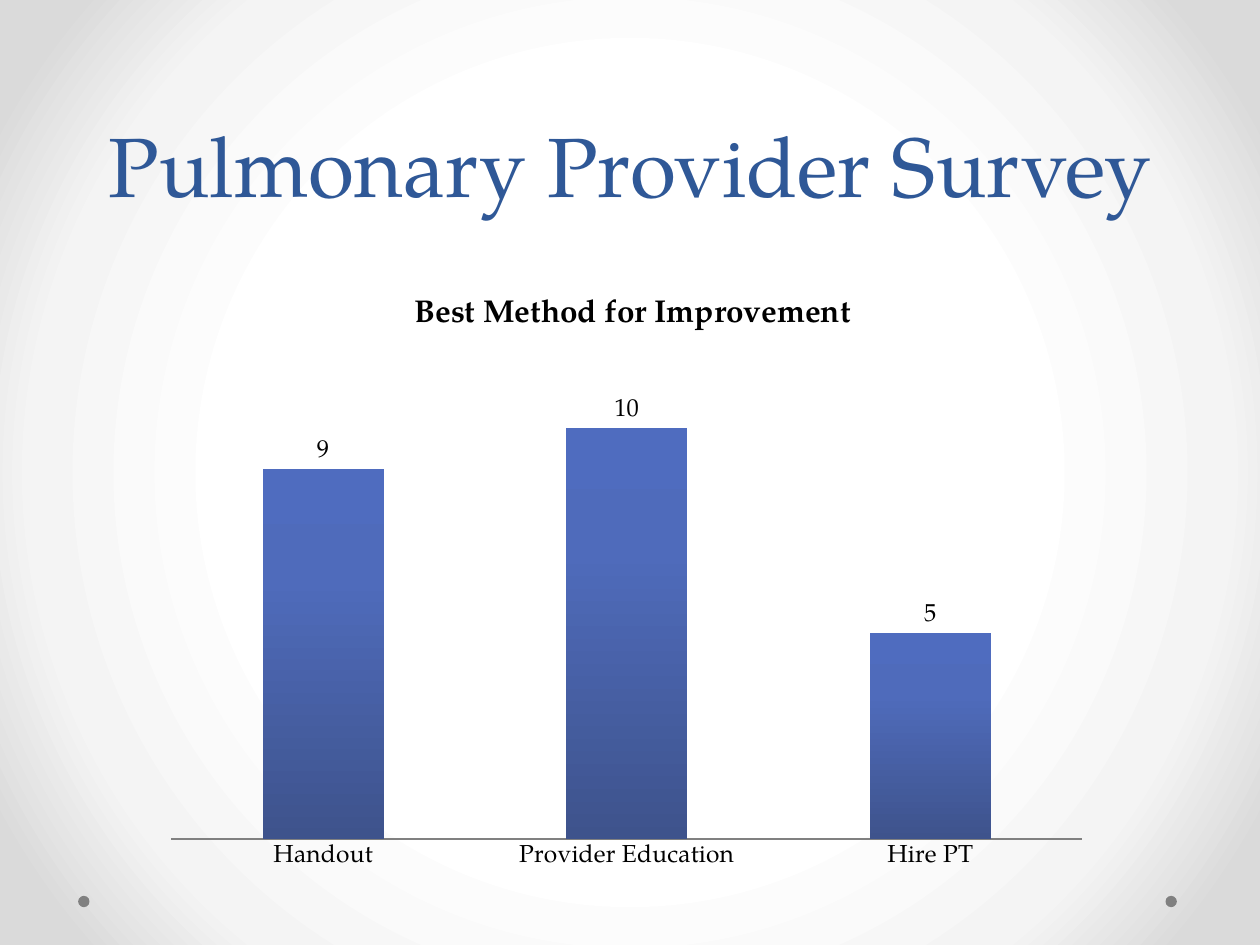
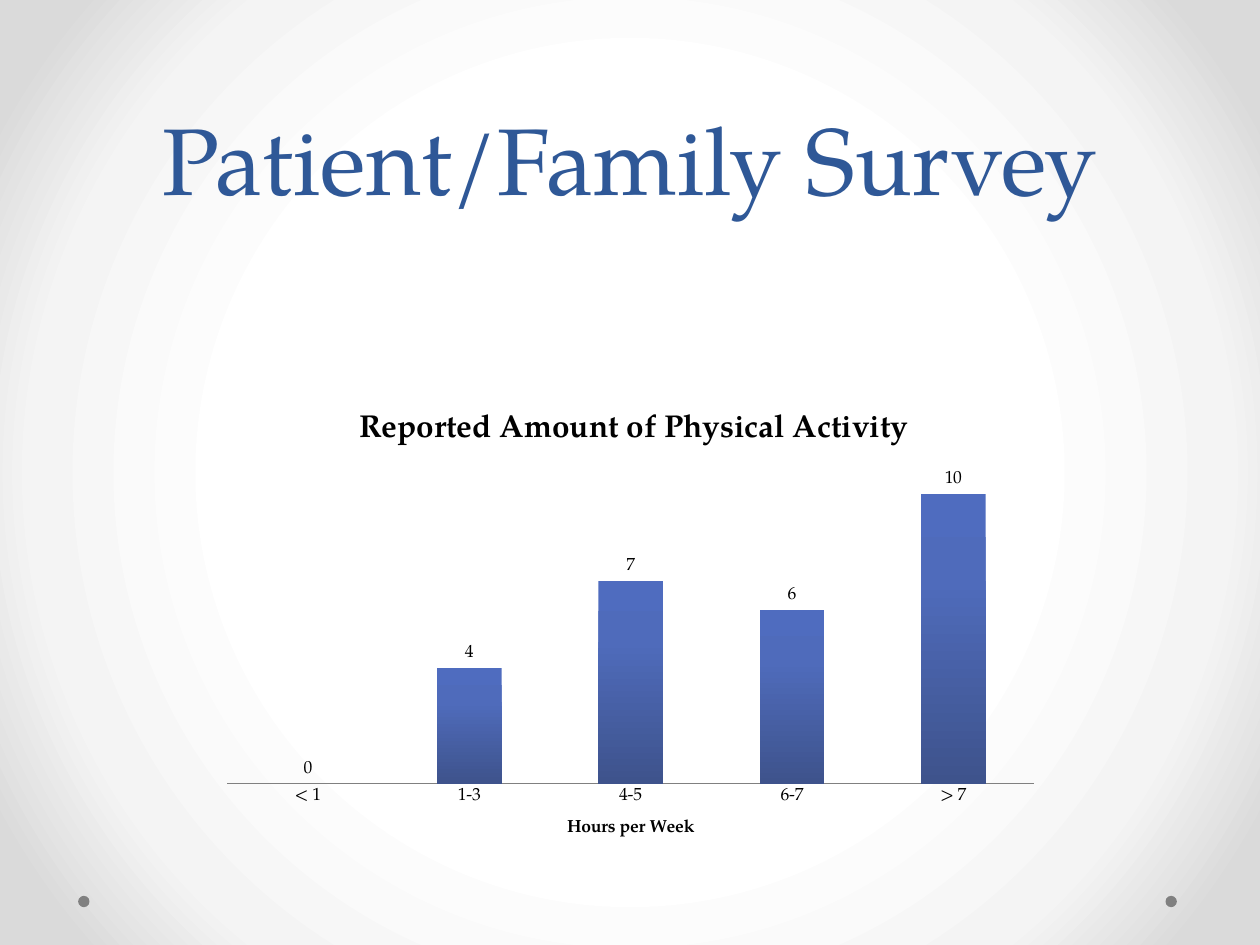
"""Build two survey slides, each with a title and a column chart."""
from dataclasses import dataclass

from pptx import Presentation
from pptx.chart.chart import Chart
from pptx.chart.data import CategoryChartData
from pptx.dml.color import RGBColor
from pptx.enum.chart import XL_CHART_TYPE, XL_LABEL_POSITION, XL_TICK_MARK
from pptx.enum.shapes import MSO_SHAPE
from pptx.enum.text import MSO_ANCHOR, PP_ALIGN
from pptx.oxml import parse_xml
from pptx.oxml.ns import nsdecls, qn
from pptx.slide import Slide
from pptx.util import Inches, Pt


@dataclass(frozen=True)
class Theme:
    """Colours, gradients and type sizes for the deck."""
    font: str = "TeX Gyre Pagella"
    title: str = "2F5897"
    text: str = "000000"
    dot: str = "808080"
    axis: str = "808080"
    back: tuple = ((50, "FFFFFF"), (76, "F4F4F4"), (92, "DADADA"))
    bar: tuple = ((0, "4F6CBF"), (30, "4F6BBB"), (100, "3E538C"))
    lead: int = 58
    head: int = 18
    small: int = 10


@dataclass(frozen=True)
class Survey:
    """One survey slide; frames are left, top, width, height."""
    title: str
    size: int
    head: str
    cats: tuple
    vals: tuple
    frame: tuple
    plot: tuple
    spot: tuple
    labels: int
    line: float
    axis: str = ""


THEME = Theme()
DOTS = (9.25, 0.62)
CIRCLE = '<a:path path="circle"><a:fillToRect l="50000" t="50000" r="50000" b="50000"/></a:path>'
DOWN = '<a:lin ang="5400000" scaled="0"/>'
SURVEYS = (
    Survey("Pulmonary Provider Survey", 48, "Best Method for Improvement",
           ("Handout", "Provider Education", "Hire PT"), (9, 10, 5),
           (1.21, 2.16, 7.53, 4.84), (0.02, 0.12, 0.96, 0.81), (0.27, 0.03), 14, 0.75),
    Survey("Patient/Family Survey", 54, "Reported Amount of Physical Activity",
           ("< 1", "1-3", "4-5", "6-7", "> 7"), (0, 4, 7, 6, 10),
           (1.67, 2.86, 6.67, 4), (0.02, 0.15, 0.96, 0.69), (0.17, 0.09), 10, 1,
           "Hours per Week"),
)


def shade(node, stops: tuple, form: str) -> None:
    """Swap the solid fill under a node for a gradient."""
    solid = node.find(".//" + qn("a:solidFill"))
    marks = "".join(f'<a:gs pos="{pos * 1000}"><a:srgbClr val="{hue}"/></a:gs>'
                    for pos, hue in stops)
    grad = f'<a:gradFill {nsdecls("a")} rotWithShape="1"><a:gsLst>{marks}</a:gsLst>{form}</a:gradFill>'
    solid.getparent().replace(solid, parse_xml(grad))


def place(node, index: int, spot: tuple, target: str = "") -> None:
    """Give a chart part a fixed place, in shares of the chart."""
    old = node.find(qn("c:layout"))
    if old is not None:
        node.remove(old)
    marks = "".join(f'<c:{key} val="{share}"/>' for key, share in zip("xywh", spot))
    node.insert(index, parse_xml(
        f'<c:layout {nsdecls("c")}><c:manualLayout>{target}<c:xMode val="edge"/>'
        f'<c:yMode val="edge"/>{marks}</c:manualLayout></c:layout>'))


def style(font, size: float, hue: str = THEME.text, bold: bool = False) -> None:
    """Set face, size, colour and weight of a font."""
    font.name, font.size, font.bold = THEME.font, Pt(size), bold
    font.color.rgb = RGBColor.from_string(hue)


def add_run(para, text: str, size: float, hue: str = THEME.text, bold: bool = False) -> None:
    """Add one styled run to a paragraph."""
    run = para.add_run()
    run.text = text
    style(run.font, size, hue, bold)


def draw_base(slide: Slide) -> None:
    """Draw the shared backdrop and the two dots."""
    slide.background.fill.solid()
    shade(slide.element.find(".//" + qn("p:bg")), THEME.back, CIRCLE)
    for left in DOTS:
        dot = slide.shapes.add_shape(MSO_SHAPE.OVAL, Inches(left), Inches(7.11),
                                     Inches(0.09), Inches(0.09))
        dot.shadow.inherit = False
        dot.fill.solid()
        dot.fill.fore_color.rgb = RGBColor.from_string(THEME.dot)
        dot.line.fill.background()


def draw_title(slide: Slide, text: str, size: int) -> None:
    """Draw the centred slide title."""
    frame = slide.shapes.add_textbox(Inches(0.5), Inches(0), Inches(9), Inches(1.75)).text_frame
    frame.word_wrap = True
    frame.vertical_anchor = MSO_ANCHOR.BOTTOM
    para = frame.paragraphs[0]
    para.alignment = PP_ALIGN.CENTER
    para.line_spacing = Pt(THEME.lead)
    add_run(para, text, size, THEME.title)


def set_axes(chart: Chart, survey: Survey) -> None:
    """Hide the value axis and style the category axis."""
    value = chart.value_axis
    value.minimum_scale, value.maximum_scale = 0, 12
    value.has_major_gridlines = False
    value.visible = False
    axis = chart.category_axis
    axis.major_tick_mark = axis.minor_tick_mark = XL_TICK_MARK.NONE
    axis.format.line.width = Pt(survey.line)
    axis.format.line.color.rgb = RGBColor.from_string(THEME.axis)
    style(axis.tick_labels.font, survey.labels)
    if survey.axis:
        add_run(axis.axis_title.text_frame.paragraphs[0], survey.axis, THEME.small, bold=True)


def draw_chart(slide: Slide, survey: Survey) -> None:
    """Draw the column chart of a survey."""
    data = CategoryChartData()
    data.categories = survey.cats
    data.add_series("Series 1", survey.vals)
    chart = slide.shapes.add_chart(XL_CHART_TYPE.COLUMN_CLUSTERED,
                                   *map(Inches, survey.frame), data).chart
    style(chart.font, THEME.small)
    chart.has_legend = False
    add_run(chart.chart_title.text_frame.paragraphs[0], survey.head, THEME.head, bold=True)
    chart.chart_title.include_in_layout = False
    set_axes(chart, survey)
    plot = chart.plots[0]
    plot.gap_width, plot.overlap, plot.vary_by_categories = 150, -25, False
    plot.has_data_labels = True
    labels = plot.data_labels
    labels.show_value = True
    labels.position = XL_LABEL_POSITION.OUTSIDE_END
    style(labels.font, survey.labels)
    fill = plot.series[0].format.fill
    fill.solid()
    fill.fore_color.rgb = RGBColor.from_string(THEME.bar[0][1])
    root = chart.element.find(qn("c:chart"))
    shade(root.find(".//" + qn("c:ser")), THEME.bar, DOWN)
    place(root.find(qn("c:title")), 1, survey.spot)
    place(root.find(qn("c:plotArea")), 0, survey.plot, '<c:layoutTarget val="inner"/>')


def main() -> None:
    """Build and save the deck."""
    deck = Presentation()
    deck.slide_width, deck.slide_height = Inches(10), Inches(7.5)
    for survey in SURVEYS:
        slide = deck.slides.add_slide(deck.slide_layouts[6])
        draw_base(slide)
        draw_title(slide, survey.title, survey.size)
        draw_chart(slide, survey)
    deck.save("out.pptx")


if __name__ == "__main__":
    main()
